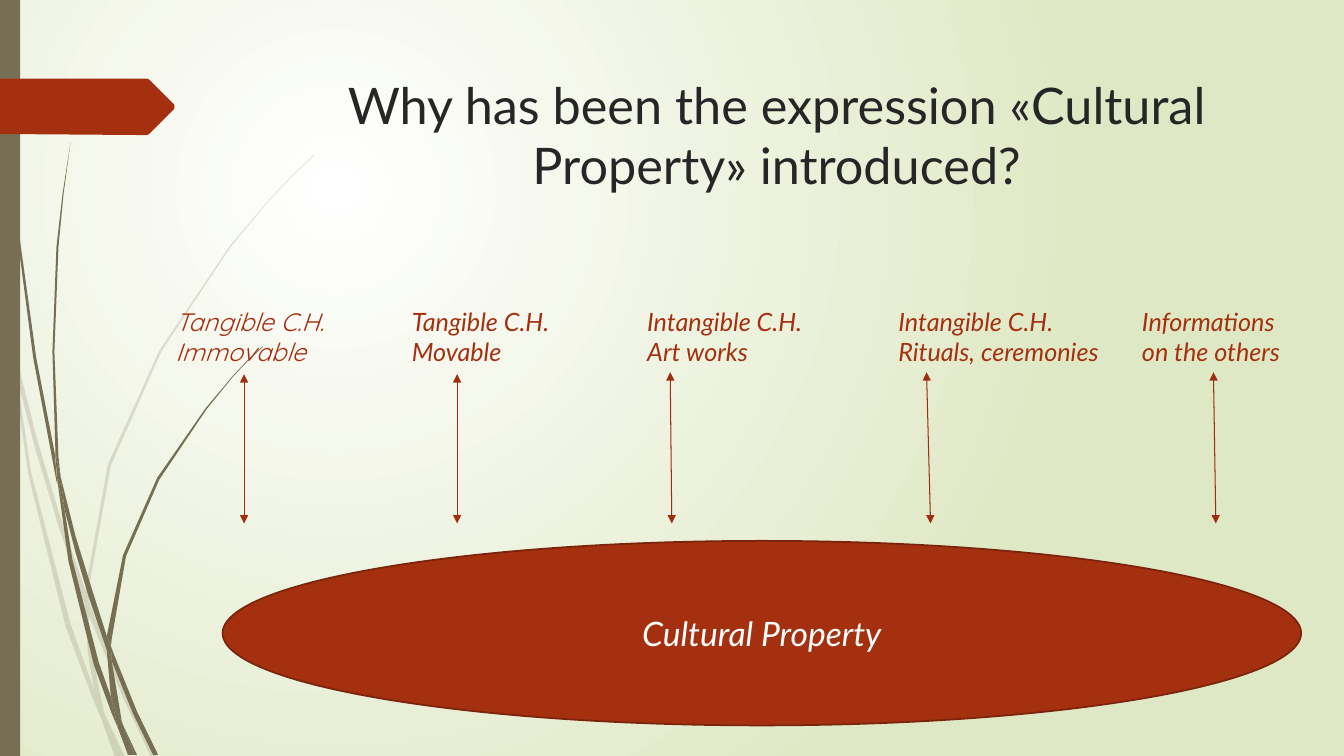
from lxml import etree
from pptx import Presentation
from pptx.dml.color import RGBColor
from pptx.enum.shapes import MSO_CONNECTOR, MSO_SHAPE
from pptx.enum.text import MSO_ANCHOR, PP_ALIGN
from pptx.oxml.ns import qn
from pptx.util import Cm, Pt

STRAIGHT = MSO_CONNECTOR.STRAIGHT
RECTANGLE, OVAL = MSO_SHAPE.RECTANGLE, MSO_SHAPE.OVAL
CENTER, MIDDLE = PP_ALIGN.CENTER, MSO_ANCHOR.MIDDLE

WHITE = RGBColor(0xFF, 0xFF, 0xFF)
PALE_GREEN = RGBColor(0xDF, 0xE8, 0xC4)
OLIVE = RGBColor(0x76, 0x6F, 0x54)
RUST = RGBColor(0xA5, 0x30, 0x10)
ARROW_RUST = RGBColor(0x9E, 0x2E, 0x0F)
DARK_RUST = RGBColor(0x7A, 0x24, 0x0C)
CHARCOAL = RGBColor(0x26, 0x26, 0x26)

# Outline points are counted in steps of 0.0254 cm
OUTLINE_STEP = 0.0254
FAINT_GRASS = [
    [(11, 350), (9, 322), (0, 282), (0, 299), (10, 344)],
    [(58, 522), (84, 599), (85, 586), (62, 520), (36, 433), (14, 345), (17, 376), (36, 449)],
    [(92, 607), (88, 596), (88, 610), (123, 694), (150, 751), (155, 751), (127, 692)],
    [(119, 751), (124, 751), (105, 711)],
    [(93, 683), (70, 619), (31, 469), (17, 376), (11, 350), (28, 470), (65, 621), (92, 693),
     (101, 714), (99, 707)],
    [(84, 599), (87, 646), (93, 683), (96, 692), (105, 711), (103, 706), (91, 646),
     (88, 610), (88, 608)],
    [(88, 584), (110, 462), (160, 349), (229, 245), (268, 198), (290, 175), (312, 154),
     (312, 153), (289, 175), (268, 197), (228, 244), (158, 348), (107, 461), (85, 584),
     (85, 586), (88, 596)],
    [(101, 714), (114, 751), (119, 751)],
    [(88, 608), (88, 610), (88, 596), (85, 586), (84, 599)],
    [(96, 692), (93, 683), (99, 707), (101, 714), (119, 751), (105, 711)],
]
DARK_GRASS = [
    [(7, 110), (17, 233), (33, 355), (56, 477), (57, 481), (55, 457), (55, 453), (36, 355),
     (19, 232), (8, 109), (5, 48), (4, 0), (3, 0), (4, 48)],
    [(88, 592), (106, 645), (106, 633), (106, 631), (93, 590), (75, 532), (60, 472),
     (64, 505), (75, 548)],
    [(113, 649), (110, 641), (111, 656), (132, 708), (152, 749), (157, 749), (136, 706)],
    [(110, 691), (98, 657), (72, 556), (64, 505), (57, 477), (68, 557), (93, 659),
     (111, 708), (117, 722), (116, 717)],
    [(60, 472), (58, 453), (54, 349), (58, 245), (63, 193), (70, 141), (62, 193), (56, 245),
     (52, 349), (55, 449)],
    [(133, 749), (136, 749), (122, 719)],
    [(57, 477), (64, 505), (60, 472), (55, 449), (55, 453)],
    [(111, 633), (125, 552), (158, 476), (205, 406), (231, 374), (245, 359), (261, 344),
     (260, 344), (245, 358), (231, 373), (204, 405), (156, 474), (122, 551), (106, 631),
     (110, 641)],
    [(117, 722), (127, 749), (131, 749)],
    [(106, 645), (110, 691), (116, 706), (122, 719), (121, 716), (111, 656), (109, 651)],
    [(106, 645), (109, 651), (111, 656), (110, 641), (106, 631), (106, 633)],
    [(116, 706), (110, 691), (116, 717), (117, 722), (130, 749), (133, 749), (122, 719)],
]
MARKER = [(173, 108), (148, 133), (146, 134), (136, 134), (0, 133), (0, 78), (146, 78),
          (148, 79), (173, 104)]

# Label left, width and height, lines, font, then arrow top (x, y) and bottom x, in cm
CATEGORIES = [
    (4.17, 4.65, 1.8, "Tangible C.H.\nImmovable", "Quicksand", 6.15, 9.43, 6.15),
    (10.13, 4.37, 2.57, "Tangible C.H.\nMovable", "Lato", 11.52, 9.43, 11.52),
    (16.06, 4.75, 1.8, "Intangible C.H.\nArt works", "Lato", 16.89, 9.38, 16.93),
    (22.39, 6.15, 1.8, "Intangible C.H.\nRituals, ceremonies", "Lato", 23.35, 9.38, 23.45),
    (28.53, 4.24, 1.8, "Informations\non the others", "Lato", 30.58, 9.38, 30.64),
]
LABEL_TOP, ARROW_BOTTOM = 7.59, 13.19


def write_text(shape, text, font_name, size, color, italic=False, alignment=None):
    shape.text_frame.text = text
    for paragraph in shape.text_frame.paragraphs:
        paragraph.alignment = alignment
        for run in paragraph.runs:
            run.font.name = font_name
            run.font.size = Pt(size)
            run.font.italic = italic
            run.font.color.rgb = color


def fill_plain(shape, color):
    """Give the shape a solid fill without line or shadow."""
    shape.shadow.inherit = False
    shape.fill.solid()
    shape.fill.fore_color.rgb = color
    shape.line.fill.background()


presentation = Presentation()
presentation.slide_width, presentation.slide_height = Cm(33.87), Cm(19.05)
slide = presentation.slides.add_slide(presentation.slide_layouts[6])
shapes = slide.shapes

# Radial background
background_fill = slide.background.fill
background_fill.gradient()
for stop, color in zip(background_fill.gradient_stops, (WHITE, PALE_GREEN)):
    stop.color.rgb = color
gradient = slide.element.find(".//" + qn("a:gradFill"))
gradient.remove(gradient.find(qn("a:lin")))
circle = etree.SubElement(gradient, qn("a:path"), path="circle")
etree.SubElement(circle, qn("a:fillToRect"), l="50000", t="50000", r="100000", b="100000")

# Side bar, grass and marker
side_bar = shapes.add_shape(RECTANGLE, 0, 0, Cm(0.51), presentation.slide_height)
fill_plain(side_bar, OLIVE)
for outlines, color, opacity in [
    (FAINT_GRASS, OLIVE, 20),
    (DARK_GRASS, OLIVE, 100),
    ([MARKER], RUST, 100),
]:
    for outline in outlines:
        builder = shapes.build_freeform(*outline[0], scale=Cm(OUTLINE_STEP))
        builder.add_line_segments(outline[1:])
        piece = builder.convert_to_shape()
        fill_plain(piece, color)
        if opacity < 100:
            fill_color = piece.element.spPr.find(qn("a:solidFill"))[0]
            etree.SubElement(fill_color, qn("a:alpha"), val=str(opacity * 1000))

title = shapes.add_textbox(Cm(7.2), Cm(1.74), Cm(24.75), Cm(3.56))
title.text_frame.word_wrap = True
write_text(title, "Why has been the expression «Cultural Property» introduced?",
           "Lato", 36, CHARCOAL, alignment=CENTER)

# Categories with their arrows
for left, width, height, text, font_name, top_x, top_y, bottom_x in CATEGORIES:
    arrow = shapes.add_connector(STRAIGHT, Cm(top_x), Cm(top_y), Cm(bottom_x), Cm(ARROW_BOTTOM))
    arrow.line.color.rgb = ARROW_RUST
    arrow.line.width = Pt(0.75)
    line_element = arrow.element.spPr.find(qn("a:ln"))
    for end in ("a:headEnd", "a:tailEnd"):
        etree.SubElement(line_element, qn(end), type="triangle")
    etree.SubElement(arrow.element.spPr, qn("a:effectLst"))

    label = shapes.add_textbox(Cm(left), Cm(LABEL_TOP), Cm(width), Cm(height))
    label.text_frame.word_wrap = False
    write_text(label, text, font_name, 18, RUST, italic=True)

ellipse = shapes.add_shape(OVAL, Cm(5.61), Cm(13.63), Cm(27.18), Cm(4.65))
fill_plain(ellipse, RUST)
ellipse.line.color.rgb = DARK_RUST
ellipse.line.width = Pt(1.25)
ellipse.text_frame.vertical_anchor = MIDDLE
write_text(ellipse, "Cultural Property", "Lato", 24, WHITE, True, CENTER)

presentation.save("out.pptx")
